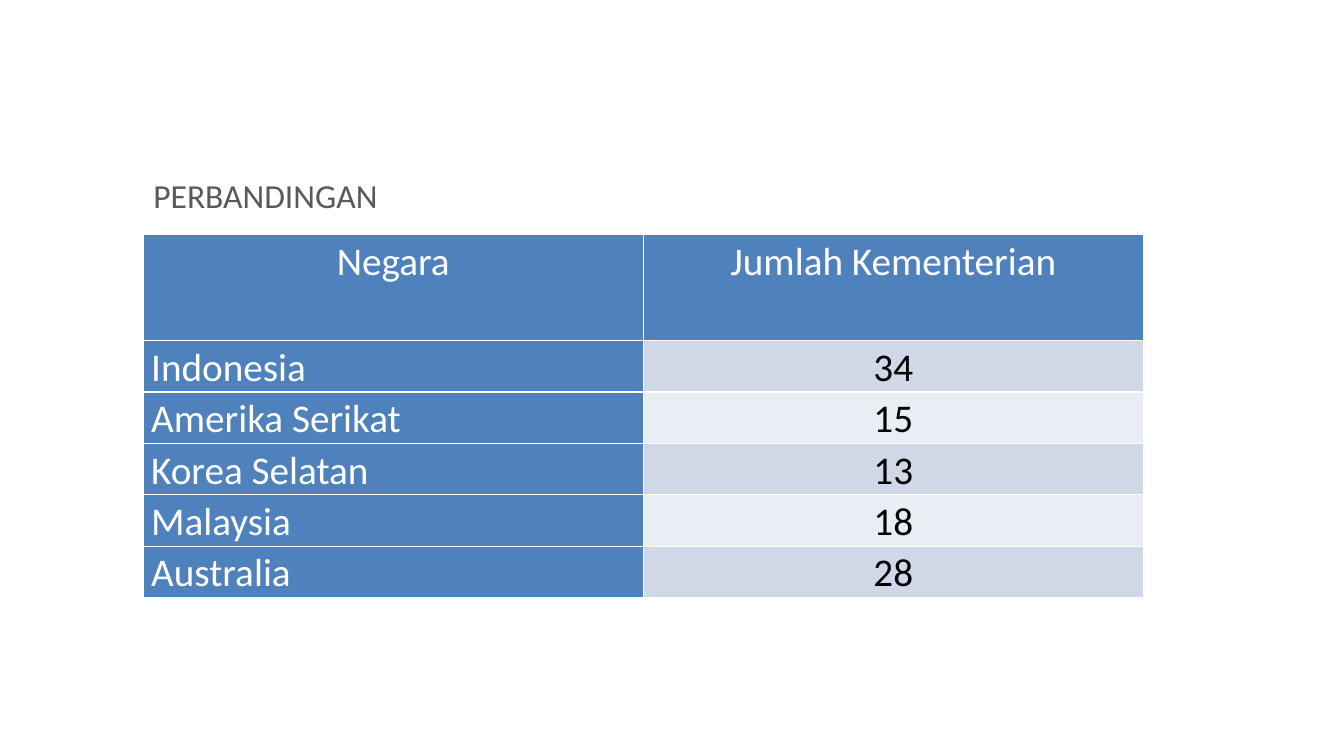
"""Build a slide comparing the number of ministries in five countries."""
from dataclasses import dataclass

from lxml import etree
from pptx import Presentation
from pptx import util as u
from pptx.dml.color import RGBColor
from pptx.enum import text
from pptx.oxml import ns
from pptx.table import _Cell

FONT = "Calibri"
WHITE = RGBColor(0xFF, 0xFF, 0xFF)
BLACK = RGBColor(0x00, 0x00, 0x00)
GREY = RGBColor(0x59, 0x59, 0x59)
BLUE = RGBColor(0x4F, 0x81, 0xBD)
BANDS = (RGBColor(0xD0, 0xD8, 0xE8), RGBColor(0xE9, 0xED, 0xF4))

LEFT = u.Inches(1.42)
COLUMN_WIDTH = u.Inches(4.96)
HEADER_HEIGHT = u.Inches(1.05)
ROW_HEIGHT = u.Inches(0.51)


@dataclass(frozen=True)
class Country:
    name: str
    ministries: int


@dataclass(frozen=True)
class CellStyle:
    fill: RGBColor
    color: RGBColor
    alignment: text.PP_ALIGN


HEADER = CellStyle(BLUE, WHITE, text.PP_ALIGN.CENTER)
COUNTRY_NAME = CellStyle(BLUE, WHITE, text.PP_ALIGN.LEFT)
COUNTS = tuple(CellStyle(band, BLACK, text.PP_ALIGN.CENTER) for band in BANDS)

COLUMN_TITLES = ("Negara", "Jumlah Kementerian")
COUNTRIES = (
    Country("Indonesia", 34),
    Country("Amerika Serikat", 15),
    Country("Korea Selatan", 13),
    Country("Malaysia", 18),
    Country("Australia", 28),
)


def format_runs(paragraph, size: int, color: RGBColor) -> None:
    for run in paragraph.runs:
        run.font.name = FONT
        run.font.size = u.Pt(size)
        run.font.bold = False
        run.font.color.rgb = color


def add_borders(cell: _Cell) -> None:
    properties = cell._tc.get_or_add_tcPr()
    for side in ("lnL", "lnR", "lnT", "lnB"):
        line = etree.SubElement(properties, ns.qn(f"a:{side}"), w=str(u.Pt(1)))
        fill = etree.SubElement(line, ns.qn("a:solidFill"))
        etree.SubElement(fill, ns.qn("a:srgbClr"), val=str(WHITE))


def fill_cell(cell: _Cell, content: str, style: CellStyle) -> None:
    add_borders(cell)
    cell.fill.solid()
    cell.fill.fore_color.rgb = style.fill
    cell.margin_left = cell.margin_right = u.Inches(0.08)
    cell.margin_top = cell.margin_bottom = 0
    cell.text_frame.text = content
    paragraph = cell.text_frame.paragraphs[0]
    paragraph.alignment = style.alignment
    paragraph.line_spacing = 1.07
    format_runs(paragraph, 28, style.color)


def add_title(slide, content: str) -> None:
    title = slide.shapes.title
    title.left, title.top = LEFT, u.Inches(1.7)
    title.width, title.height = u.Inches(11.02), u.Inches(0.47)
    frame = title.text_frame
    frame.text = content
    frame.vertical_anchor = text.MSO_ANCHOR.MIDDLE
    frame.paragraphs[0].alignment = text.PP_ALIGN.LEFT
    format_runs(frame.paragraphs[0], 24, GREY)


def add_ministry_table(slide) -> None:
    height = HEADER_HEIGHT + ROW_HEIGHT * len(COUNTRIES)
    table = slide.shapes.add_table(
        len(COUNTRIES) + 1, len(COLUMN_TITLES),
        LEFT, u.Inches(2.33), COLUMN_WIDTH * len(COLUMN_TITLES), height,
    ).table
    table.first_col = True
    for column in table.columns:
        column.width = COLUMN_WIDTH
    for row in table.rows:
        row.height = ROW_HEIGHT
    table.rows[0].height = HEADER_HEIGHT
    for index, column_title in enumerate(COLUMN_TITLES):
        fill_cell(table.cell(0, index), column_title, HEADER)
    for index, country in enumerate(COUNTRIES):
        fill_cell(table.cell(index + 1, 0), country.name, COUNTRY_NAME)
        count_style = COUNTS[index % len(COUNTS)]
        fill_cell(table.cell(index + 1, 1), str(country.ministries), count_style)


def main() -> None:
    presentation = Presentation()
    presentation.slide_width = u.Inches(13.33)
    presentation.slide_height = u.Inches(7.5)
    slide = presentation.slides.add_slide(presentation.slide_layouts[5])
    add_title(slide, "PERBANDINGAN")
    add_ministry_table(slide)
    presentation.save("out.pptx")


if __name__ == "__main__":
    main()
